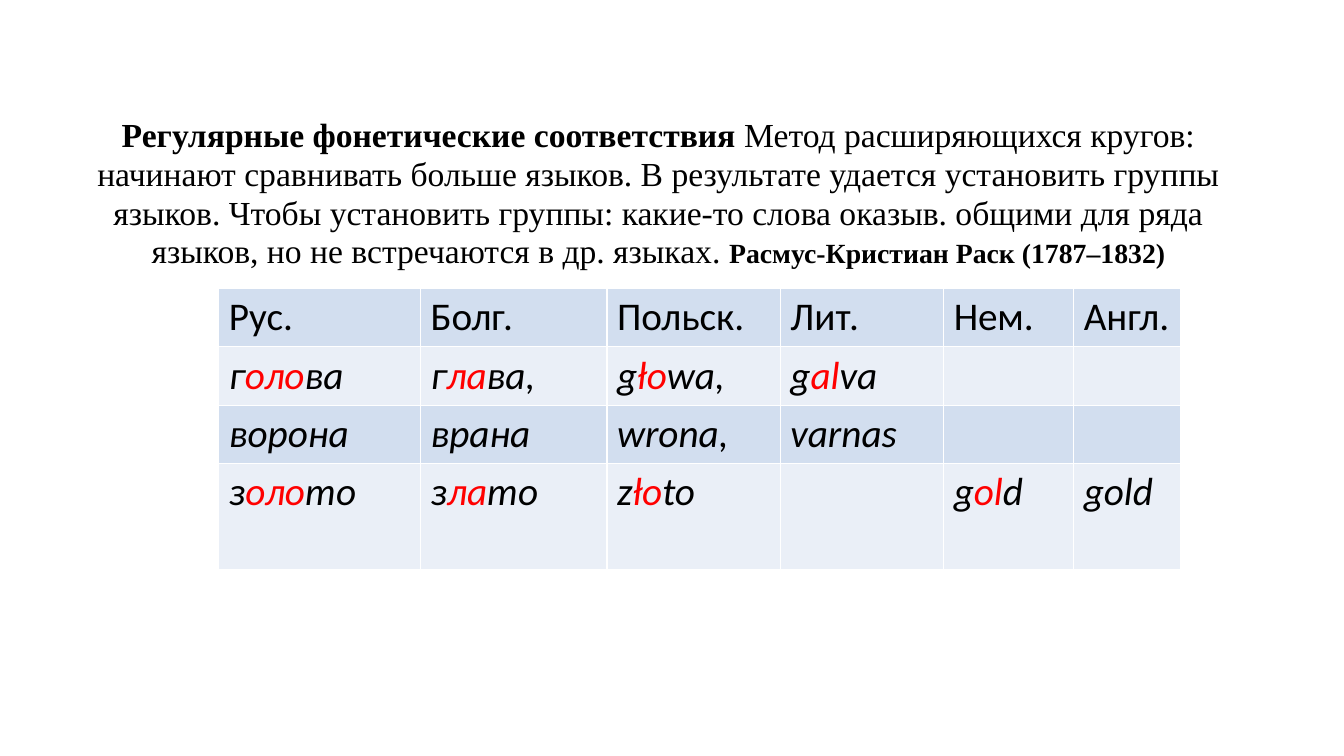
"""Build a slide on regular sound matches between languages."""
from lxml.etree import SubElement as Sub
from pptx import Presentation as Deck
from pptx.dml.color import RGBColor as Color
from pptx.enum.text import MSO_ANCHOR as Anchor, PP_ALIGN as Align
from pptx.oxml.ns import qn
from pptx.util import Inches, Pt

BLACK = Color(0, 0, 0)
RED = Color(255, 0, 0)
WHITE = Color(255, 255, 255)
BLUE = Color(0xD2, 0xDE, 0xEF)
PALE = Color(0xEA, 0xEF, 0xF7)

TITLE = [
    ("Регулярные фонетические соответствия ", dict(bold=True)),
    ("Метод расширяющихся кругов: начинают сравнивать больше языков. "
     "В результате удается установить группы языков. Чтобы установить группы: "
     "какие-то слова оказыв. общими для ряда языков, но не встречаются "
     "в др. языках. ", {}),
    ("Расмус-Кристиан Раск (1787–1832)", dict(bold=True, size=19.8)),
]
WORDS = [
    ["Рус.", "Болг.", "Польск.", "Лит.", "Нем.", "Англ."],
    ["г|оло|ва", "г|ла|ва,", "g|ło|wa,", "g|al|va", "", ""],
    ["ворона", "врана", "wrona,", "varnas", "", ""],
    ["з|оло|то", "з|ла|то", "z|ło|to", "", "g|ol|d", "gold"],
]
COLS = [2, 1.85, 1.72, 1.62, 1.29, 1.06]
ROWS = [0.58, 0.58, 0.58, 1.05]


def put(para, text, font="Calibri", size=28, color=BLACK, bold=False, slant=False):
    run = para.add_run()
    run.text = text
    face = run.font
    face.name, face.size, face.bold, face.italic = font, Pt(size), bold, slant
    face.color.rgb = color


class Page:
    def __init__(self, deck):
        self.wide, self.high = deck.slide_width, deck.slide_height
        self.slide = deck.slides.add_slide(deck.slide_layouts[6])
        self.serif = dict(font="Times New Roman", size=24)

    def place(self, left, top, wide, high):
        return (round(left * self.wide), round(top * self.high),
                round(wide * self.wide), round(high * self.high))

    def title(self, parts, *box):
        frame = self.slide.shapes.add_textbox(*self.place(*box)).text_frame
        frame.word_wrap = True
        frame.vertical_anchor = Anchor.TOP
        frame.margin_top, frame.margin_bottom = Inches(1.16), 0
        para = frame.paragraphs[0]
        para.alignment, para.line_spacing = Align.CENTER, 0.96
        for text, look in parts:
            put(para, text, **{**self.serif, **look})

    def table(self, words, cols, rows, *box):
        shape = self.slide.shapes.add_table(len(rows), len(cols), *self.place(*box))
        grid = shape.table
        grid.first_row = grid.horz_banding = False
        for col, wide in zip(grid.columns, cols):
            col.width = Inches(wide)
        for r, (row, high) in enumerate(zip(grid.rows, rows)):
            row.height = Inches(high)
            for cell, word in zip(row.cells, words[r]):
                self.cell(cell, word, PALE if r % 2 else BLUE, r > 0)

    def cell(self, cell, word, fill, slant):
        props = cell._tc.get_or_add_tcPr()
        for side in ("a:lnL", "a:lnR", "a:lnT", "a:lnB"):
            line = Sub(props, qn(side), w=str(Pt(1)))
            Sub(Sub(line, qn("a:solidFill")), qn("a:srgbClr"), val=str(WHITE))
        cell.fill.solid()
        cell.fill.fore_color.rgb = fill
        for i, part in enumerate(word.split("|")):
            if part:
                put(cell.text_frame.paragraphs[0], part,
                    color=RED if i % 2 else BLACK, slant=slant)


def main():
    deck = Deck()
    deck.slide_width, deck.slide_height = Inches(13.33), Inches(7.5)
    page = Page(deck)
    page.title(TITLE, 0.78 / 13.33, 0, 11.5 / 13.33, 2.57 / 7.5)
    page.table(WORDS, COLS, ROWS, 2.17 / 13.33, 2.86 / 7.5,
               sum(COLS) / 13.33, sum(ROWS) / 7.5)
    deck.save("out.pptx")


if __name__ == "__main__":
    main()
